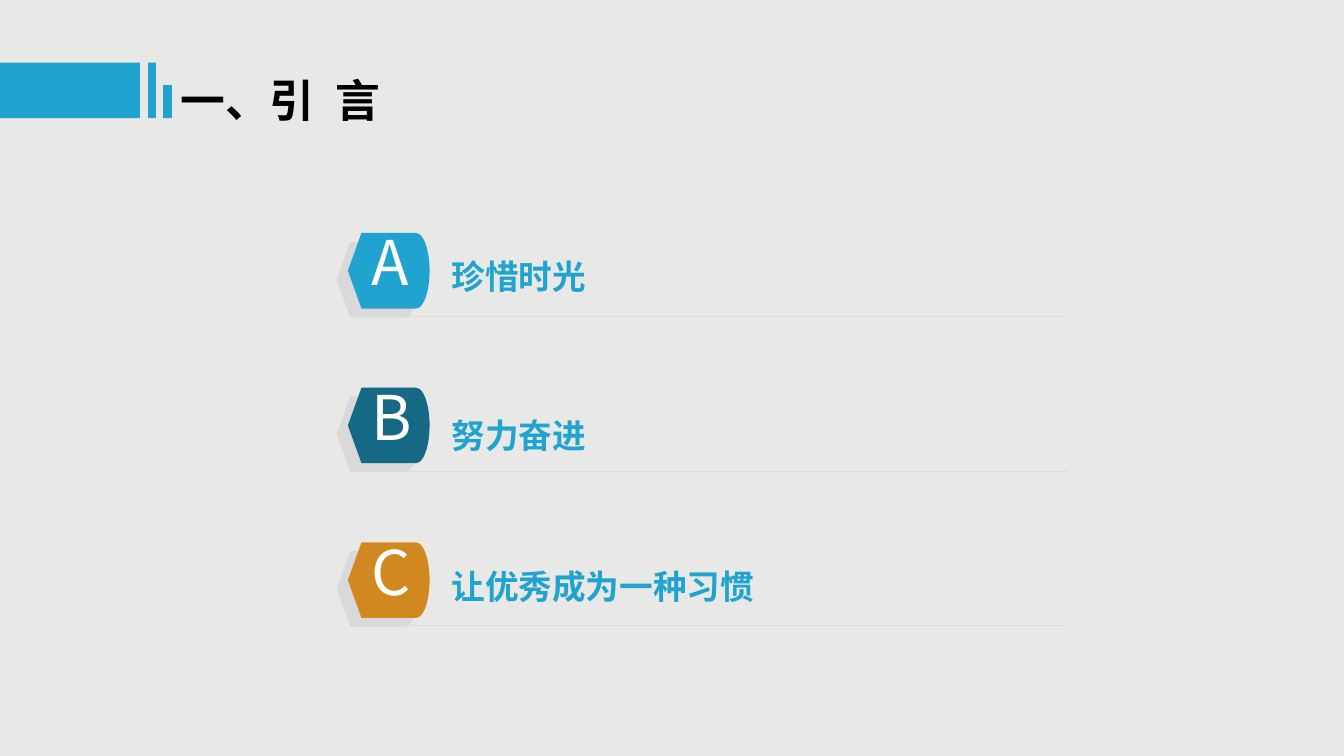
from dataclasses import dataclass

from pptx import Presentation
from pptx.dml import color
from pptx.enum import shapes, text
from pptx.oxml import ns
from pptx.util import Pt

COLORS = {
    "background": "E8E8E6",
    "blue": "21A3D0",
    "teal": "156985",
    "orange": "D18821",
    "shade": "D9D9D9",
    "rule": "DCDCDC",
    "white": "FFFFFF",
    "black": "000000",
}
TITLE_FONT = "Noto Sans CJK SC"
LETTER_FONT = "Noto Sans CJK JP"

TILE_LEFT, TILE_TOP = 248.5, 166.4
TILE_WIDTH, TILE_HEIGHT = 58.4, 54
SHADE_LEFT, SHADE_DROP = 8, 6.3
RULE_LEFT, RULE_RIGHT, RULE_DROP = 249.8, 763.2, 59.6
ROW_PITCH = 110.5
LABEL_LEFT, LABEL_HEIGHT = 315.4, 41.8


@dataclass
class Bar:
    left: float
    top: float
    width: float
    height: float


@dataclass
class Topic:
    letter: str
    label: str
    color: str
    label_top: float
    label_width: float


BARS = [
    Bar(0, 44.8, 100, 39.6),
    Bar(105.8, 44.8, 5.6, 39.6),
    Bar(116.6, 60.8, 6.2, 23.6),
]
TOPICS = [
    Topic("A", "珍惜时光", "blue", 173.5, 323.3),
    Topic("B", "努力奋进", "teal", 287.3, 340.6),
    Topic("C", "让优秀成为一种习惯", "orange", 394.6, 331.9),
]


def rgb(name: str) -> color.RGBColor:
    return color.RGBColor.from_string(COLORS[name])


def add_block(slide, kind, left: float, top: float, width: float, height: float, fill: str):
    shape = slide.shapes.add_shape(kind, Pt(left), Pt(top), Pt(width), Pt(height))
    shape.shadow.inherit = False
    shape.fill.solid()
    shape.fill.fore_color.rgb = rgb(fill)
    shape.line.fill.background()
    return shape


def write(shape, words: str, size: float, font_name: str, fill: str, bold: bool, alignment):
    """Fill the shape with one formatted paragraph and return it."""
    shape.text_frame.word_wrap = True
    shape.text_frame.text = words
    paragraph = shape.text_frame.paragraphs[0]
    paragraph.alignment = alignment
    font = paragraph.runs[0].font
    font.size, font.bold, font.name = Pt(size), bold, font_name
    font.color.rgb = rgb(fill)
    # East Asian characters take their own typeface
    east_asian = paragraph.runs[0].font._element.makeelement(ns.qn("a:ea"), {"typeface": font_name})
    font._element.find(ns.qn("a:latin")).addnext(east_asian)
    return paragraph


def add_label(slide, left: float, top: float, width: float, height: float,
              words: str, size: float, fill: str):
    box = slide.shapes.add_textbox(Pt(left), Pt(top), Pt(width), Pt(height))
    paragraph = write(box, words, size, TITLE_FONT, fill, True, text.PP_ALIGN.JUSTIFY)
    box.text_frame.auto_size = text.MSO_AUTO_SIZE.SHAPE_TO_FIT_TEXT
    return paragraph


def add_rule(slide, y: float) -> None:
    rule = slide.shapes.add_connector(
        shapes.MSO_CONNECTOR.STRAIGHT, Pt(RULE_LEFT), Pt(y), Pt(RULE_RIGHT), Pt(y))
    rule.line.color.rgb = rgb("rule")
    rule.line.width = Pt(0.75)
    properties = rule._element.spPr
    properties.append(properties.makeelement(ns.qn("a:effectLst"), {}))


def add_tile(slide, topic: Topic, top: float) -> None:
    kind = shapes.MSO_SHAPE.FLOWCHART_DISPLAY
    add_rule(slide, top + RULE_DROP)
    add_block(slide, kind, TILE_LEFT - SHADE_LEFT, top + SHADE_DROP,
              TILE_WIDTH, TILE_HEIGHT, "shade")
    tile = add_block(slide, kind, TILE_LEFT, top, TILE_WIDTH, TILE_HEIGHT, topic.color)
    write(tile, topic.letter, 44, LETTER_FONT, "white", False, text.PP_ALIGN.CENTER)
    tile.text_frame.vertical_anchor = text.MSO_ANCHOR.MIDDLE
    tile.text_frame.margin_bottom = Pt(17.3)


def main() -> None:
    presentation = Presentation()
    presentation.slide_width, presentation.slide_height = Pt(960), Pt(540)
    slide = presentation.slides.add_slide(presentation.slide_layouts[6])
    slide.background.fill.solid()
    slide.background.fill.fore_color.rgb = rgb("background")

    # Heading
    for bar in BARS:
        add_block(slide, shapes.MSO_SHAPE.RECTANGLE,
                  bar.left, bar.top, bar.width, bar.height, "blue")
    add_label(slide, 121.7, 48.2, 172.8, 46.1, "一、引  言", 32, "black")

    # Lettered tiles
    for row, topic in enumerate(TOPICS):
        add_tile(slide, topic, TILE_TOP + row * ROW_PITCH)

    # Topic labels
    for topic in TOPICS:
        paragraph = add_label(slide, LABEL_LEFT, topic.label_top, topic.label_width,
                              LABEL_HEIGHT, topic.label, 24, "blue")
        paragraph.line_spacing = 1.2
        paragraph.space_before = Pt(6)

    presentation.save("out.pptx")


if __name__ == "__main__":
    main()
